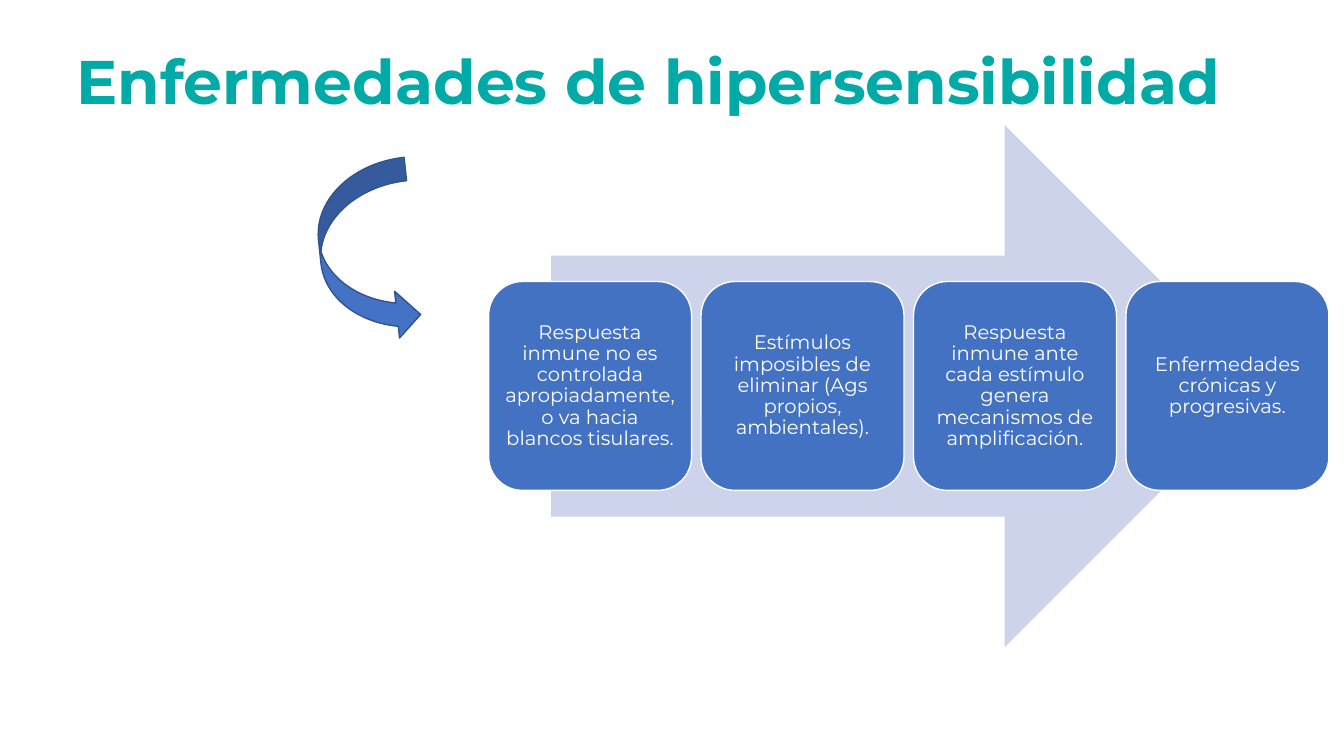
from pptx import Presentation
from pptx.dml.color import RGBColor
from pptx.enum.shapes import MSO_SHAPE
from pptx.enum.text import MSO_ANCHOR, PP_ALIGN
from pptx.util import Pt

RIGHT_ARROW = MSO_SHAPE.RIGHT_ARROW
ROUNDED = MSO_SHAPE.ROUNDED_RECTANGLE
CURVED_ARROW = MSO_SHAPE.CURVED_UP_ARROW
MIDDLE = MSO_ANCHOR.MIDDLE
LEFT, CENTER = PP_ALIGN.LEFT, PP_ALIGN.CENTER

FONT = "Montserrat"
TEAL, WHITE = "00AAA7", "FFFFFF"
LAVENDER, STEP_BLUE = "CCD3EA", "4372C3"
ARROW_BLUE, ARROW_EDGE = "4472C4", "31538F"

STEP_LEFT, STEP_TOP = 349, 201.1
STEP_WIDTH, STEP_HEIGHT = 145, 149.2
STEP_PITCH = 151.75
STEPS = [
    "Respuesta inmune no es controlada apropiadamente, o va hacia blancos tisulares.",
    "Estímulos imposibles de eliminar (Ags propios, ambientales).",
    "Respuesta inmune ante cada estímulo genera mecanismos de amplificación.",
    "Enfermedades crónicas y progresivas.",
]


def color(hex_value):
    return RGBColor.from_string(hex_value)


def write_text(holder, text, size, hex_value, align, inset_x, inset_y, bold=False):
    frame = holder.text_frame
    frame.word_wrap = True
    frame.vertical_anchor = MIDDLE
    frame.margin_left = frame.margin_right = Pt(inset_x)
    frame.margin_top = frame.margin_bottom = Pt(inset_y)
    paragraph = frame.paragraphs[0]
    paragraph.alignment = align
    paragraph.line_spacing = 0.9
    run = paragraph.add_run()
    run.text = text
    run.font.name = FONT
    run.font.size = Pt(size)
    run.font.bold = bold
    run.font.color.rgb = color(hex_value)


def add_title(slide, text):
    title = slide.shapes.add_textbox(Pt(47.5), Pt(8), Pt(894), Pt(104.4))
    write_text(title, text, 44, TEAL, LEFT, 7.2, 3.6, bold=True)


def add_figure(slide, preset, left, top, width, height, fill, edge=None):
    figure = slide.shapes.add_shape(preset, Pt(left), Pt(top), Pt(width), Pt(height))
    figure.shadow.inherit = False
    figure.fill.solid()
    figure.fill.fore_color.rgb = color(fill)
    if edge:
        figure.line.color.rgb = color(edge)
        figure.line.width = Pt(1)
    else:
        figure.line.fill.background()
    return figure


def add_step(slide, index, text):
    left = STEP_LEFT + index * STEP_PITCH
    step = add_figure(slide, ROUNDED, left, STEP_TOP, STEP_WIDTH, STEP_HEIGHT,
                      STEP_BLUE, WHITE)
    write_text(step, text, 14, WHITE, CENTER, 4.2, 4.2)


def main():
    deck = Presentation()
    deck.slide_width, deck.slide_height = Pt(960), Pt(540)
    slide = deck.slides.add_slide(deck.slide_layouts[6])

    add_title(slide, "Enfermedades de hipersensibilidad")
    add_figure(slide, RIGHT_ARROW, 393.7, 89.4, 510.4, 372.8, LAVENDER)
    for index, text in enumerate(STEPS):
        add_step(slide, index, text)
    turn = add_figure(slide, CURVED_ARROW, 197.3, 146.9, 129.6, 67, ARROW_BLUE, ARROW_EDGE)
    turn.rotation = 84

    deck.save("out.pptx")


if __name__ == "__main__":
    main()
